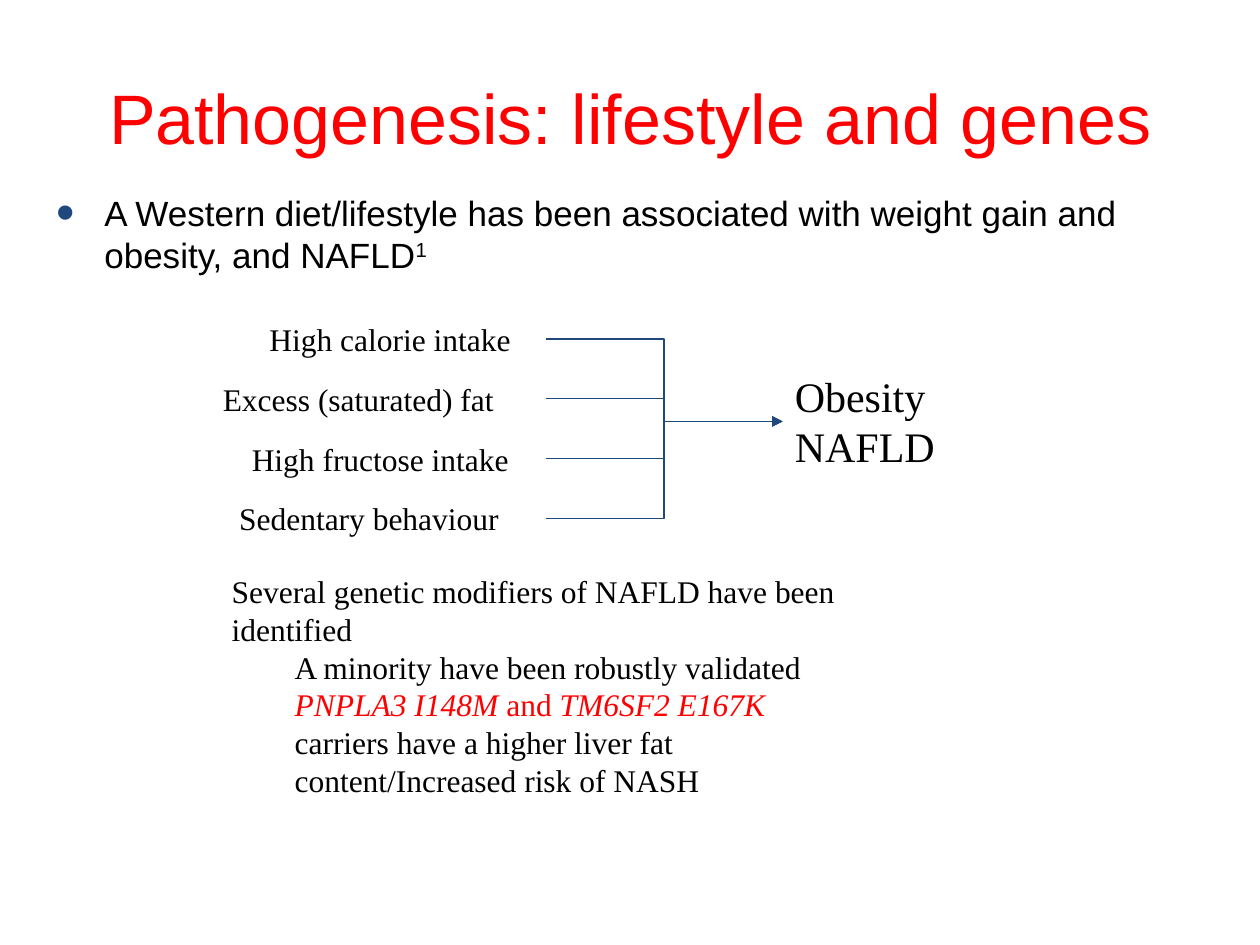
import pptx
import pptx.dml.color
import pptx.enum.shapes
import pptx.enum.text
import pptx.oxml.ns
import pptx.util
from lxml import etree
from pptx.util import Inches

COLORS = {"accent": "1F497D", "highlight": "FF0000", "text": "000000"}
SANS = "Arial"
SERIF = "Times New Roman"
FACTORS = [
    ("High calorie intake", 2.29),
    ("Excess (saturated) fat", 2.66),
    ("High fructose intake", 2.43),
    ("Sedentary behaviour", 2.53),
]
FACTOR_RIGHT = 4.33
FACTOR_TOP = 2.49
FACTOR_PITCH = 0.475


def rgb(name):
    return pptx.dml.color.RGBColor.from_string(COLORS[name])


def add_child(parent, tag, **attributes):
    return etree.SubElement(parent, pptx.oxml.ns.qn(tag), attributes)


def style(paragraph, size, font_name, color="text"):
    paragraph.font.size = pptx.util.Pt(size)
    paragraph.font.name = font_name
    paragraph.font.color.rgb = rgb(color)


def add_text(slide, left, top, width, height, wrap=True, grow=False):
    box = slide.shapes.add_textbox(
        Inches(left), Inches(top), Inches(width), Inches(height))
    box.text_frame.word_wrap = wrap
    if grow:
        box.text_frame.auto_size = pptx.enum.text.MSO_AUTO_SIZE.SHAPE_TO_FIT_TEXT
    return box


def add_label(slide, lines, size, left, top, width, height):
    """Add an unwrapped serif label with one paragraph per line."""
    box = add_text(slide, left, top, width, height, wrap=False, grow=True)
    box.text_frame.text = "\n".join(lines)
    for paragraph in box.text_frame.paragraphs:
        style(paragraph, size, SERIF)
    return box


def add_title(slide):
    frame = add_text(slide, 0.5, 0.3, 9, 1.25).text_frame
    frame.vertical_anchor = pptx.enum.text.MSO_ANCHOR.MIDDLE
    paragraph = frame.paragraphs[0]
    paragraph.text = "Pathogenesis: lifestyle and genes"
    paragraph.alignment = pptx.enum.text.PP_ALIGN.CENTER
    style(paragraph, 40, SANS, "highlight")


def add_statement(slide):
    """Add the bulleted statement with its superscript reference."""
    paragraph = add_text(slide, 0.35, 1.47, 9.3, 3.2).text_frame.paragraphs[0]
    properties = paragraph._p.get_or_add_pPr()
    properties.set("marL", str(Inches(0.38)))
    properties.set("indent", str(Inches(-0.38)))
    add_child(add_child(properties, "a:buClr"), "a:srgbClr", val=COLORS["accent"])
    add_child(properties, "a:buSzPct", val="150000")
    add_child(properties, "a:buFont", typeface=SANS)
    add_child(properties, "a:buChar", char="•")
    style(paragraph, 20, SANS)
    paragraph.add_run().text = (
        "A Western diet/lifestyle has been associated with weight gain and "
        "obesity, and NAFLD")
    reference = paragraph.add_run()
    reference.text = "1"
    reference._r.get_or_add_rPr().set("baseline", "30000")


def add_arrow(slide, source, target):
    """Join the right side of source to the left side of target."""
    arrow = slide.shapes.add_connector(
        pptx.enum.shapes.MSO_CONNECTOR.ELBOW, 0, 0, 0, 0)
    arrow.begin_connect(source, 3)
    arrow.end_connect(target, 1)
    arrow.line.color.rgb = rgb("accent")
    arrow.line.width = pptx.util.Pt(0.75)
    add_child(arrow.line._get_or_add_ln(), "a:tailEnd", type="triangle")
    add_child(arrow._element.spPr, "a:effectLst")


def add_factors(slide):
    outcome = add_label(slide, ["Obesity", "NAFLD"], 24, 6.21, 2.89, 1.34, 0.91)
    for index, (name, width) in enumerate(FACTORS):
        factor = add_label(slide, [name], 18, FACTOR_RIGHT - width,
                           FACTOR_TOP + index * FACTOR_PITCH, width, 0.4)
        add_arrow(slide, factor, outcome)


def add_genetics(slide):
    frame = add_text(slide, 1.74, 4.49, 5, 1.92, grow=True).text_frame
    frame.text = ("Several genetic modifiers of NAFLD have been identified\n"
                  "A minority have been robustly validated")
    genes = frame.add_paragraph()
    for paragraph in frame.paragraphs:
        style(paragraph, 18, SERIF)
    for paragraph in frame.paragraphs[1:]:
        paragraph.level = 1
        paragraph._p.get_or_add_pPr().set("marL", str(Inches(0.5)))
    for text, color, italic in [
        ("PNPLA3 I148M ", "highlight", True),
        ("and ", "highlight", False),
        ("TM6SF2 E167K ", "highlight", True),
        ("carriers have a higher liver fat content/Increased risk of NASH",
         "text", False),
    ]:
        run = genes.add_run()
        run.text = text
        run.font.italic = italic
        run.font.color.rgb = rgb(color)


def main():
    presentation = pptx.Presentation()
    presentation.slide_width = Inches(10)
    presentation.slide_height = Inches(7.5)
    slide = presentation.slides.add_slide(presentation.slide_layouts[6])
    add_title(slide)
    add_statement(slide)
    add_factors(slide)
    add_genetics(slide)
    presentation.save("out.pptx")


if __name__ == "__main__":
    main()
